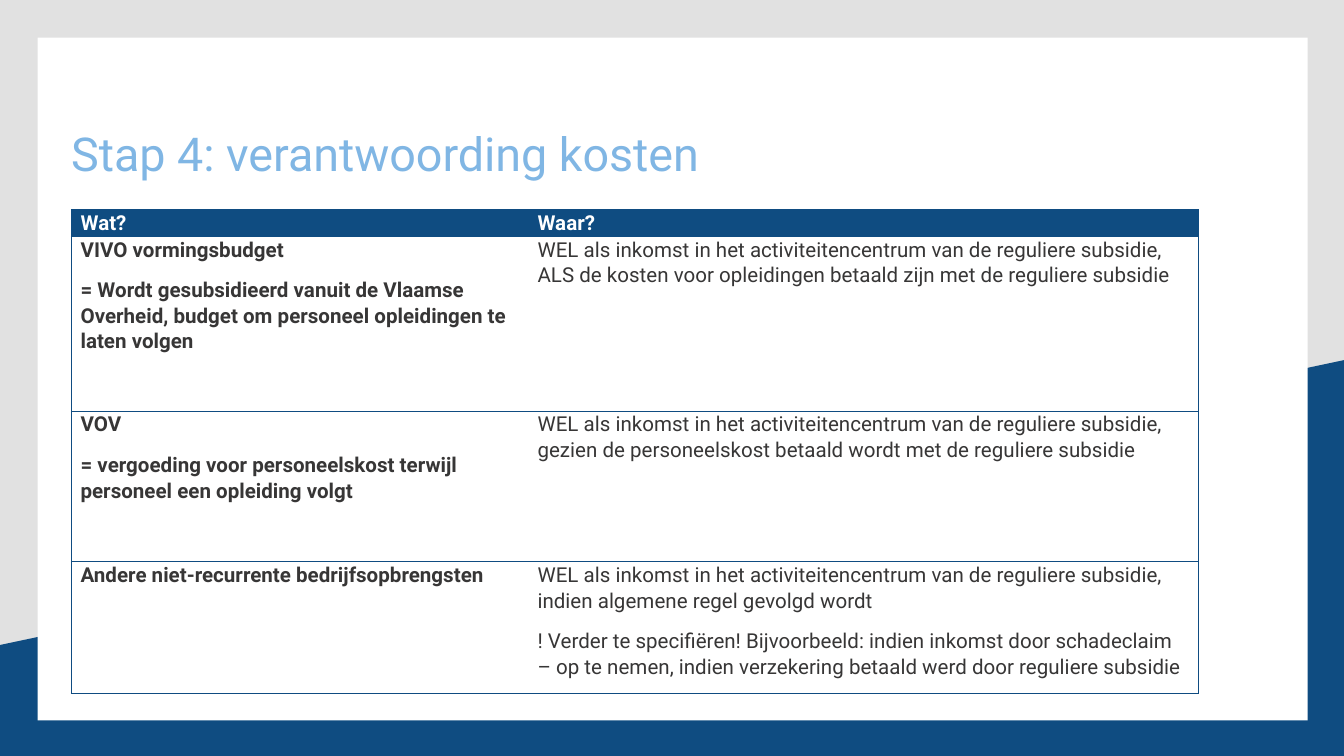
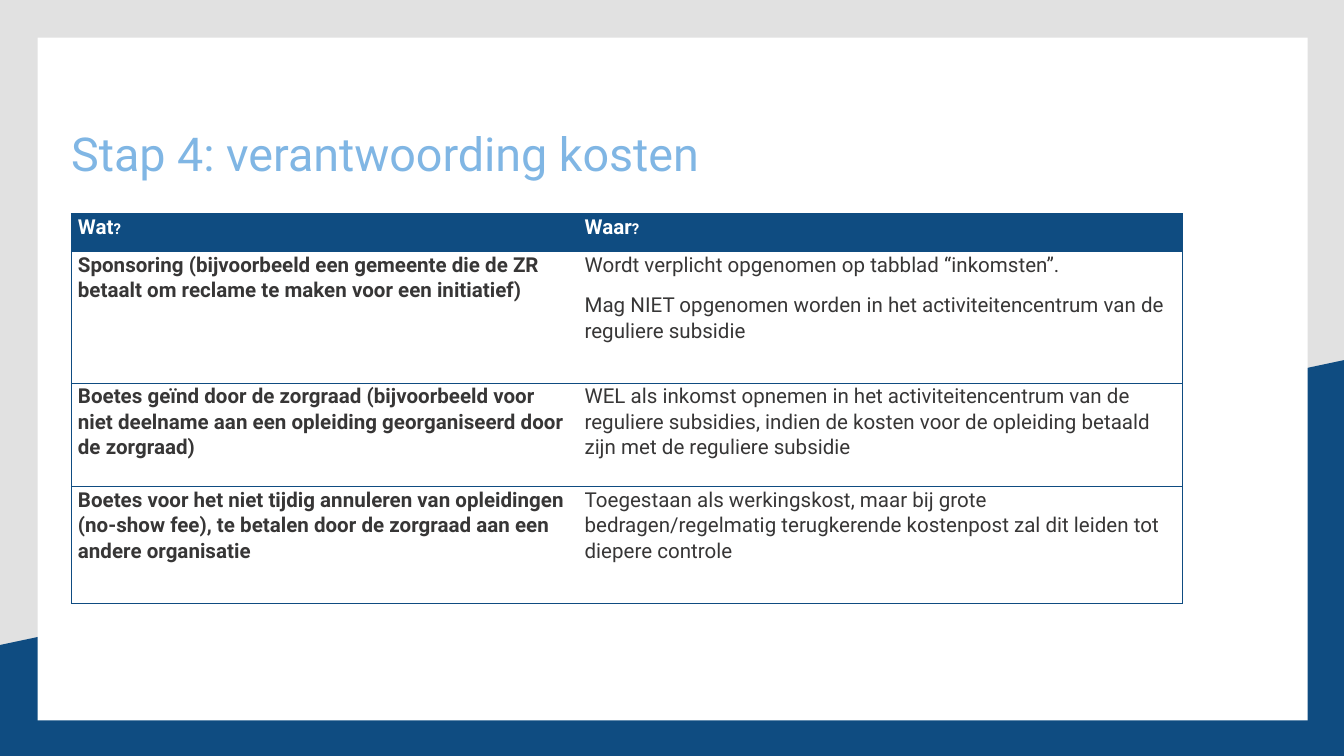
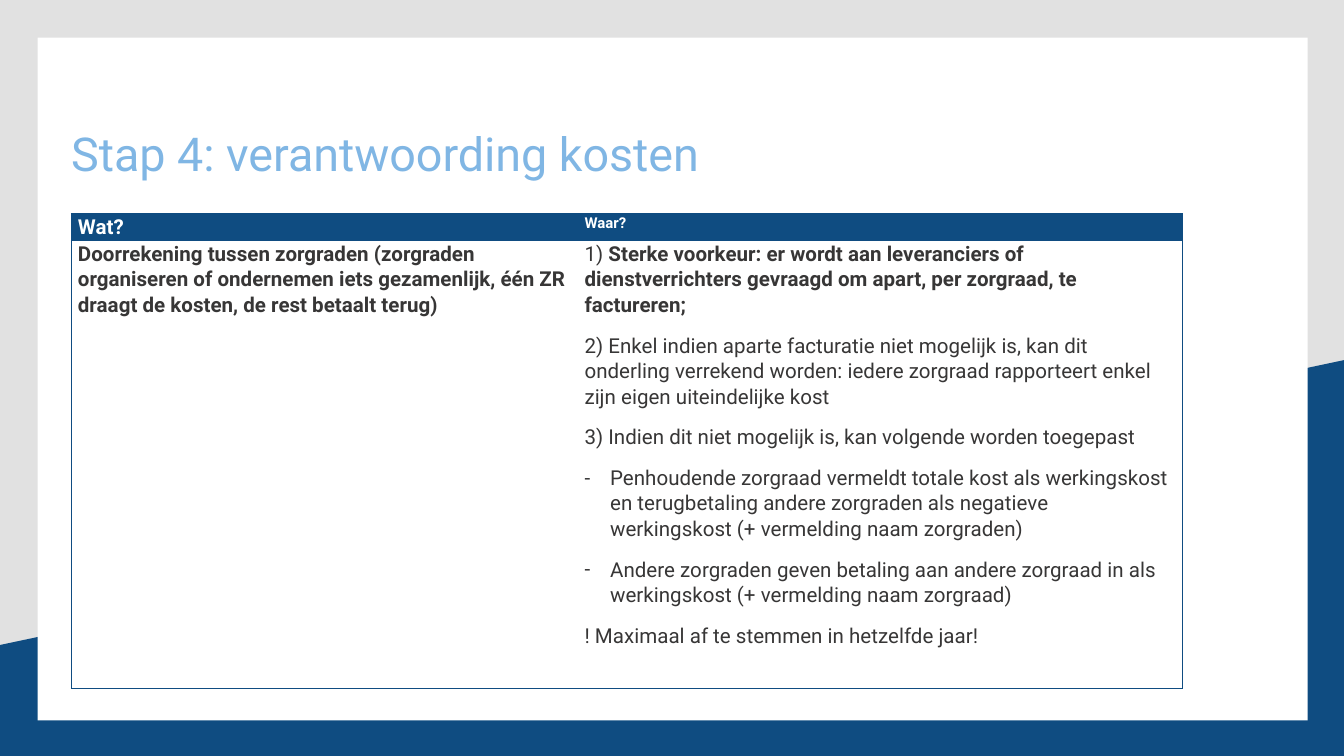
from lxml import etree
from pptx import Presentation
from pptx.dml.color import RGBColor
from pptx.enum.shapes import MSO_SHAPE
from pptx.enum.text import MSO_ANCHOR
from pptx.oxml.ns import qn
from pptx.util import Inches, Pt

RECT = MSO_SHAPE.RECTANGLE
TOP = MSO_ANCHOR.TOP

WIDTH = 10
HEIGHT = WIDTH * 9 / 16
FONT = "Roboto"
GREY, BLUE, LIGHT_BLUE, WHITE, DARK = "E1E1E1", "0F4C81", "80B6E4", "FFFFFF", "373636"
TITLE = "Stap 4: verantwoording kosten"
TITLE_BOX = (0.53, 0.98, 6.54, 0.7)
PANEL_BOX = (0.28, 0.28, 9.45, 5.08)
BAND = [(WIDTH, 2.68), (WIDTH, HEIGHT), (0, HEIGHT), (0, 4.8)]
NO_STYLE = "{2D5ABB26-0587-4C30-8999-92F81FD0307C}"
BULLET = "- "

TITLE_FORMAT = {"size": Pt(25), "color": LIGHT_BLUE}
HEADER_FORMAT = {"size": Pt(11), "bold": True, "color": WHITE}
WHAT_FORMAT = {"size": Pt(11), "bold": True, "color": DARK}
WHERE_FORMAT = {"size": Pt(11), "bold": False, "color": DARK}
CELL_SPACING = {"line_spacing": 1.07, "space_after": Pt(8)}
SMALL = {"size": Pt(8)}
BOLD = {"bold": True}

TABLES = [
    {
        "at": (0.53, 1.56),
        "cols": (3.4, 4.99),
        "heights": (0.2, 1.3, 1.12, 0.98),
        "margin": 0.07,
        "rows": [
            (["Wat?"], ["Waar?"]),
            (["VIVO vormingsbudget",
              "= Wordt gesubsidieerd vanuit de Vlaamse Overheid, budget om personeel "
              "opleidingen te laten volgen"],
             ["WEL als inkomst in het activiteitencentrum van de reguliere subsidie, "
              "ALS de kosten voor opleidingen betaald zijn met de reguliere subsidie"]),
            (["VOV",
              "= vergoeding voor personeelskost terwijl personeel een opleiding volgt"],
             ["WEL als inkomst in het activiteitencentrum van de reguliere subsidie, "
              "gezien de personeelskost betaald wordt met de reguliere subsidie"]),
            (["Andere niet-recurrente bedrijfsopbrengsten"],
             ["WEL als inkomst in het activiteitencentrum van de reguliere subsidie, "
              "indien algemene regel gevolgd wordt",
              "! Verder te specifiëren! Bijvoorbeeld: indien inkomst door schadeclaim – "
              "op te nemen, indien verzekering betaald werd door reguliere subsidie"]),
        ],
    },
    {
        "at": (0.53, 1.59),
        "cols": (3.77, 4.5),
        "heights": (0.28, 0.98, 0.77, 0.87),
        "margin": 0.05,
        "rows": [
            ([[("Wat", {}), ("?", SMALL)]], [[("Waar", {}), ("?", SMALL)]]),
            (["Sponsoring (bijvoorbeeld een gemeente die de ZR betaalt om reclame te "
              "maken voor een initiatief)"],
             ["Wordt verplicht opgenomen op tabblad “inkomsten”.",
              "Mag NIET opgenomen worden in het activiteitencentrum van de reguliere "
              "subsidie"]),
            (["Boetes geïnd door de zorgraad (bijvoorbeeld voor niet deelname aan een "
              "opleiding georganiseerd door de zorgraad)"],
             ["WEL als inkomst opnemen in het activiteitencentrum van de reguliere "
              "subsidies, indien de kosten voor de opleiding betaald zijn met de "
              "reguliere subsidie"]),
            (["Boetes voor het niet tijdig annuleren van opleidingen (no-show fee), te "
              "betalen door de zorgraad aan een andere organisatie"],
             ["Toegestaan als werkingskost, maar bij grote bedragen/regelmatig "
              "terugkerende kostenpost zal dit leiden tot diepere controle"]),
        ],
    },
    {
        "at": (0.53, 1.59),
        "cols": (3.77, 4.5),
        "heights": (0.2, 3.33),
        "margin": 0.05,
        "rows": [
            (["Wat?"], [[("Waar?", SMALL)]]),
            (["Doorrekening tussen zorgraden (zorgraden organiseren of ondernemen iets "
              "gezamenlijk, één ZR draagt de kosten, de rest betaalt terug)"],
             [[("1) ", {}),
               ("Sterke voorkeur: er wordt aan leveranciers of dienstverrichters "
                "gevraagd om apart, per zorgraad, te factureren;", BOLD)],
              "2) Enkel indien aparte facturatie niet mogelijk is, kan dit onderling "
              "verrekend worden: iedere zorgraad rapporteert enkel zijn eigen "
              "uiteindelijke kost",
              "3) Indien dit niet mogelijk is, kan volgende worden toegepast",
              "- Penhoudende zorgraad vermeldt totale kost als werkingskost en "
              "terugbetaling andere zorgraden als negatieve werkingskost (+ vermelding "
              "naam zorgraden)",
              "- Andere zorgraden geven betaling aan andere zorgraad in als "
              "werkingskost (+ vermelding naam zorgraad)",
              "! Maximaal af te stemmen in hetzelfde jaar!"]),
        ],
    },
]


def rgb(value):
    return RGBColor.from_string(value)


def set_attrs(obj, values):
    for name, value in values.items():
        setattr(obj, name, value)


def add_run(p, text, fmt):
    r = p.add_run()
    r.text = text
    set_attrs(r.font, {"name": FONT, **{k: v for k, v in fmt.items() if k != "color"}})
    r.font.color.rgb = rgb(fmt["color"])


def add_bullet(p):
    pPr = p._p.get_or_add_pPr()
    pPr.set("marL", str(Inches(0.19)))
    pPr.set("indent", str(Inches(-0.19)))
    etree.SubElement(pPr, qn("a:buFont")).set("typeface", FONT)
    etree.SubElement(pPr, qn("a:buChar")).set("char", BULLET.strip())


def fill_text(tf, paragraphs, fmt, spacing):
    for i, content in enumerate(paragraphs):
        p = tf.add_paragraph() if i else tf.paragraphs[0]
        runs = [(content, {})] if isinstance(content, str) else content
        if runs[0][0].startswith(BULLET):
            add_bullet(p)
            runs = [(runs[0][0].removeprefix(BULLET), {})]
        set_attrs(p, spacing)
        for text, changes in runs:
            add_run(p, text, {**fmt, **changes})


def paint(s, color):
    s.shadow.inherit = False
    s.fill.solid()
    s.fill.fore_color.rgb = rgb(color)
    s.line.fill.background()


def add_frame(slide):
    points = [(Inches(x), Inches(y)) for x, y in BAND]
    builder = slide.shapes.build_freeform(*points[0], scale=1.0)
    builder.add_line_segments(points[1:], close=True)
    paint(builder.convert_to_shape(), BLUE)
    paint(slide.shapes.add_shape(RECT, *map(Inches, PANEL_BOX)), WHITE)


def add_title(slide, box):
    tf = slide.shapes.add_textbox(*map(Inches, box)).text_frame
    set_attrs(tf, {"word_wrap": True, "vertical_anchor": TOP, "margin_left": 0,
                   "margin_right": 0, "margin_top": 0, "margin_bottom": 0})
    fill_text(tf, [TITLE], TITLE_FORMAT, {"line_spacing": 0.9})


def set_borders(cell, sides):
    tcPr = cell._tc.get_or_add_tcPr()
    for side in sides:
        ln = etree.SubElement(tcPr, qn(f"a:ln{side}"), w=str(Pt(0.5)))
        solid = etree.SubElement(ln, qn("a:solidFill"))
        etree.SubElement(solid, qn("a:srgbClr"), val=BLUE)


def add_cost_table(slide, cost_table):
    cols, heights, rows = (cost_table[key] for key in ("cols", "heights", "rows"))
    box = (*cost_table["at"], sum(cols), sum(heights))
    table = slide.shapes.add_table(len(rows), len(cols), *map(Inches, box)).table
    table._tbl.tblPr.find(qn("a:tableStyleId")).text = NO_STYLE
    set_attrs(table, {"first_row": False, "horz_banding": False})
    for column, width in zip(table.columns, cols):
        column.width = Inches(width)
    margin = Inches(cost_table["margin"])
    for i, (row, height) in enumerate(zip(rows, heights)):
        table.rows[i].height = Inches(height)
        for j, paragraphs in enumerate(row):
            cell = table.cell(i, j)
            set_attrs(cell, {"margin_left": margin, "margin_right": margin,
                             "margin_top": 0, "margin_bottom": 0, "vertical_anchor": TOP})
            set_borders(cell, ("LTB", "RTB")[j])
            if i == 0:
                cell.fill.solid()
                cell.fill.fore_color.rgb = rgb(BLUE)
                fmt = HEADER_FORMAT
            else:
                cell.fill.background()
                fmt = (WHAT_FORMAT, WHERE_FORMAT)[j]
            fill_text(cell.text_frame, paragraphs, fmt, CELL_SPACING)


def main():
    prs = Presentation()
    set_attrs(prs, {"slide_width": Inches(WIDTH), "slide_height": Inches(HEIGHT)})
    background = prs.slide_master.background.fill
    background.solid()
    background.fore_color.rgb = rgb(GREY)
    for cost_table in TABLES:
        slide = prs.slides.add_slide(prs.slide_layouts[6])
        add_frame(slide)
        add_title(slide, TITLE_BOX)
        add_cost_table(slide, cost_table)
    prs.save("out.pptx")


if __name__ == "__main__":
    main()
